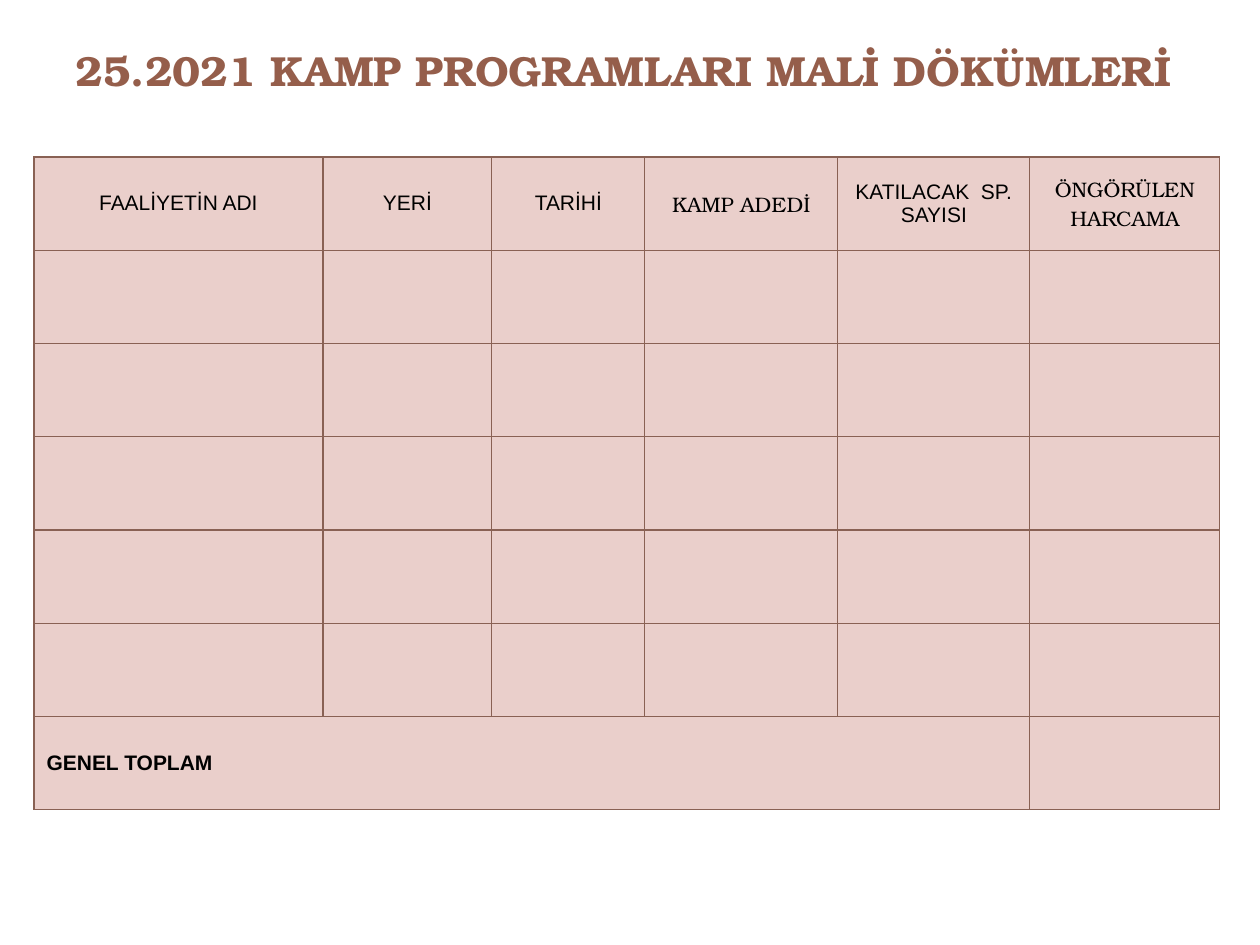
import pptx
import pptx.dml.color
import pptx.enum.text
import pptx.oxml.ns
import pptx.util
from lxml import etree

PX = 914400 // 126
COLORS = {"title": "955E4B", "cell": "EACFCB", "border": "896154", "text": "000000"}
SANS, SERIF = "Arial", "TeX Gyre Bonum"
ALIGN = pptx.enum.text.PP_ALIGN

COLUMN_WIDTHS = [289, 169, 153, 193, 192, 190]
ROW_COUNT = 7
HEADERS = [
    ("FAALİYETİN ADI", SANS),
    ("YERİ", SANS),
    ("TARİHİ", SANS),
    ("KAMP ADEDİ", SERIF),
    ("KATILACAK  SP. SAYISI", SANS),
    ("ÖNGÖRÜLEN HARCAMA", SERIF),
]


def px(*lengths):
    return [length * PX for length in lengths]


def rgb(name):
    return pptx.dml.color.RGBColor.from_string(COLORS[name])


def write(frame, text, font, size, color, bold=False, align=ALIGN.LEFT):
    paragraph = frame.paragraphs[0]
    paragraph.alignment = align
    run = paragraph.add_run()
    run.text = text
    run.font.name = font
    run.font.size = pptx.util.Pt(size)
    run.font.bold = bold
    run.font.color.rgb = rgb(color)


def add_title(slide, text):
    shape = slide.shapes.add_textbox(*px(63, 38, 1134, 97))
    shape.text_frame.word_wrap = True
    write(shape.text_frame, text, SERIF, 24, "title", bold=True)


def style_cell(cell):
    cell.vertical_anchor = pptx.enum.text.MSO_ANCHOR.MIDDLE
    qn = pptx.oxml.ns.qn
    properties = cell._tc.get_or_add_tcPr()
    for side in ("a:lnL", "a:lnR", "a:lnT", "a:lnB"):
        line = etree.SubElement(properties, qn(side), w=str(pptx.util.Pt(0.75)))
        fill = etree.SubElement(line, qn("a:solidFill"))
        etree.SubElement(fill, qn("a:srgbClr"), val=COLORS["border"])
    cell.fill.solid()
    cell.fill.fore_color.rgb = rgb("cell")


def add_budget_table(slide):
    frame = slide.shapes.add_table(
        ROW_COUNT, len(COLUMN_WIDTHS), *px(34, 157, sum(COLUMN_WIDTHS), 653))
    table = frame.table
    table.first_row = False
    table.horz_banding = False
    for column, width in zip(table.columns, px(*COLUMN_WIDTHS)):
        column.width = width
    for cell in table.iter_cells():
        style_cell(cell)

    # Header row
    for index, (text, font) in enumerate(HEADERS):
        write(table.cell(0, index).text_frame, text, font, 12, "text", align=ALIGN.CENTER)

    # Total row: the label spans all columns but the last
    last = ROW_COUNT - 1
    label = table.cell(last, 0)
    label.merge(table.cell(last, len(COLUMN_WIDTHS) - 2))
    write(label.text_frame, "GENEL TOPLAM", SANS, 12, "text", bold=True)


def main():
    presentation = pptx.Presentation()
    presentation.slide_width = pptx.util.Inches(10)
    presentation.slide_height = pptx.util.Inches(7.5)
    slide = presentation.slides.add_slide(presentation.slide_layouts[6])
    add_title(slide, "25.2021 KAMP PROGRAMLARI MALİ DÖKÜMLERİ")
    add_budget_table(slide)
    presentation.save("out.pptx")


if __name__ == "__main__":
    main()
